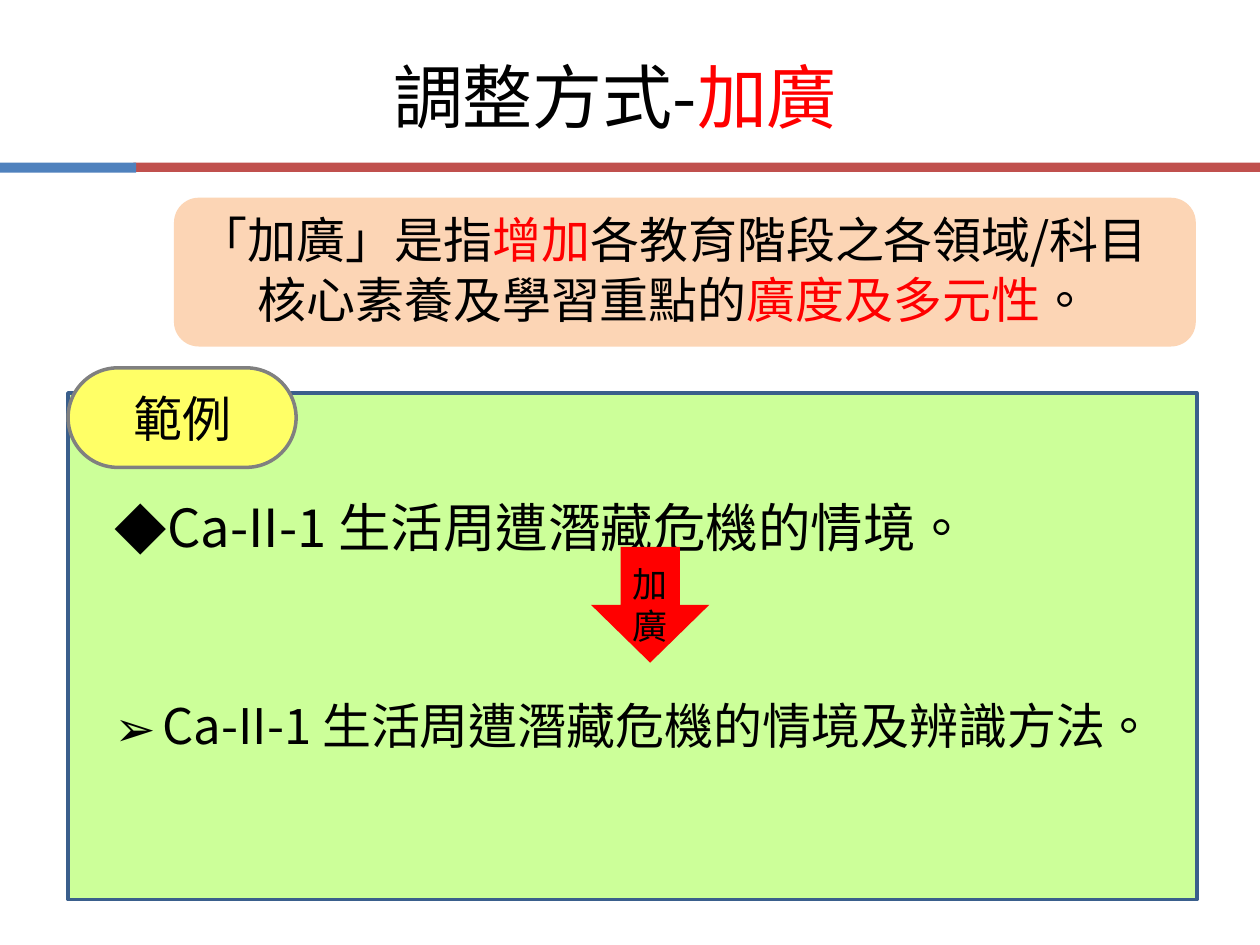
from lxml.etree import SubElement
from pptx import Presentation
from pptx.dml.color import RGBColor as Rgb
from pptx.enum.lang import MSO_LANGUAGE_ID as Lang
from pptx.enum.shapes import MSO_SHAPE as Kind
from pptx.enum.text import MSO_ANCHOR as Anchor, PP_ALIGN as Align
from pptx.oxml.ns import qn
from pptx.util import Pt

FONT = "Noto Sans CJK SC"
INK = {
    "black": "000000", "red": "FF0000", "brick": "C0504D", "blue": "4F81BD",
    "peach": "FCD5B5", "green": "CCFF99", "navy": "3A5F8C",
    "yellow": "FFFF66", "gray": "808080",
}


def tint(name):
    return Rgb.from_string(INK[name])


def add_block(slide, kind, box, fill, line=None):
    shape = slide.shapes.add_shape(kind, *map(Pt, box))
    shape.shadow.inherit = False
    shape.fill.solid()
    shape.fill.fore_color.rgb = tint(fill)
    if line:
        shape.line.color.rgb = tint(line)
        shape.line.width = Pt(2)
    else:
        shape.line.fill.background()
    return shape


def write(para, parts, size):
    """Fill a paragraph with (text, colour) parts."""
    for text, color in parts:
        run = para.add_run()
        run.text = text
        font = run.font
        font.size, font.name = Pt(size), FONT
        font.color.rgb = tint(color)
        font.language_id = Lang.TRADITIONAL_CHINESE
        SubElement(run._r.get_or_add_rPr(), qn("a:ea"), typeface=FONT)


def add_text(slide, box, parts, size, lead, align=Align.CENTER):
    frame = slide.shapes.add_textbox(*map(Pt, box)).text_frame
    frame.word_wrap = True
    para = frame.paragraphs[0]
    para.alignment = align
    para.line_spacing = Pt(lead)
    write(para, parts, size)


def add_list(slide, box, items, gap):
    """Add bulleted (mark, text, size) items, set apart by gap."""
    frame = slide.shapes.add_textbox(*map(Pt, box)).text_frame
    frame.word_wrap = True
    frame.margin_left = frame.margin_right = frame.margin_top = 0
    for i, (mark, text, size) in enumerate(items):
        para = frame.add_paragraph() if i else frame.paragraphs[0]
        para.line_spacing = Pt(50)
        para.space_before = Pt(gap if i else 0)
        props = para._p.get_or_add_pPr()
        props.set("marL", str(Pt(27.4)))
        props.set("indent", str(Pt(-27.4)))
        SubElement(props, qn("a:buFont"), typeface=FONT)
        SubElement(props, qn("a:buChar"), char=mark)
        write(para, [(text, "black")], size)


def add_tag(slide, box, text):
    tag = add_block(slide, Kind.ROUNDED_RECTANGLE, box, "yellow", "gray")
    tag.adjustments[0] = 0.5
    frame = tag.text_frame
    frame.vertical_anchor = Anchor.MIDDLE
    para = frame.paragraphs[0]
    para.alignment = Align.CENTER
    write(para, [(text, "black")], 28)


def main():
    deck = Presentation()
    deck.slide_width, deck.slide_height = Pt(720), Pt(540)
    slide = deck.slides.add_slide(deck.slide_layouts[6])

    add_block(slide, Kind.RECTANGLE, (76.3, 92.9, 643.7, 5.4), "brick")
    add_block(slide, Kind.RECTANGLE, (0, 92.9, 77.8, 5.8), "blue")
    add_text(slide, (-8.6, 27, 720, 55),
             [("調整方式-", "black"), ("加廣", "red")], 40, 48)

    add_block(slide, Kind.ROUNDED_RECTANGLE, (99.4, 113, 583.9, 85), "peach")
    add_text(slide, (102.2, 116, 565.2, 75), [
        ("「加廣」是指", "black"), ("增加", "red"),
        ("各教育階段之各領域/科目核心素養及學習重點的", "black"),
        ("廣度及多元性", "red"), ("。", "black"),
    ], 28, 34)

    add_block(slide, Kind.RECTANGLE, (38.9, 224.6, 645.1, 289.4),
              "green", "navy")
    add_list(slide, (65.5, 269, 593, 170), [
        ("◆", "Ca-II-1 生活周遭潛藏危機的情境。", 30),
        ("➢", "Ca-II-1 生活周遭潛藏危機的情境及辨識方法。", 28),
    ], 62)
    add_tag(slide, (38.9, 210.2, 130.3, 56.9), "範例")

    add_block(slide, Kind.DOWN_ARROW, (337.7, 312.5, 67.7, 66.2), "red")
    add_text(slide, (354.2, 318, 25.2, 55.4), [("加廣", "black")],
             20, 24, Align.LEFT)
    deck.save("out.pptx")


if __name__ == "__main__":
    main()
